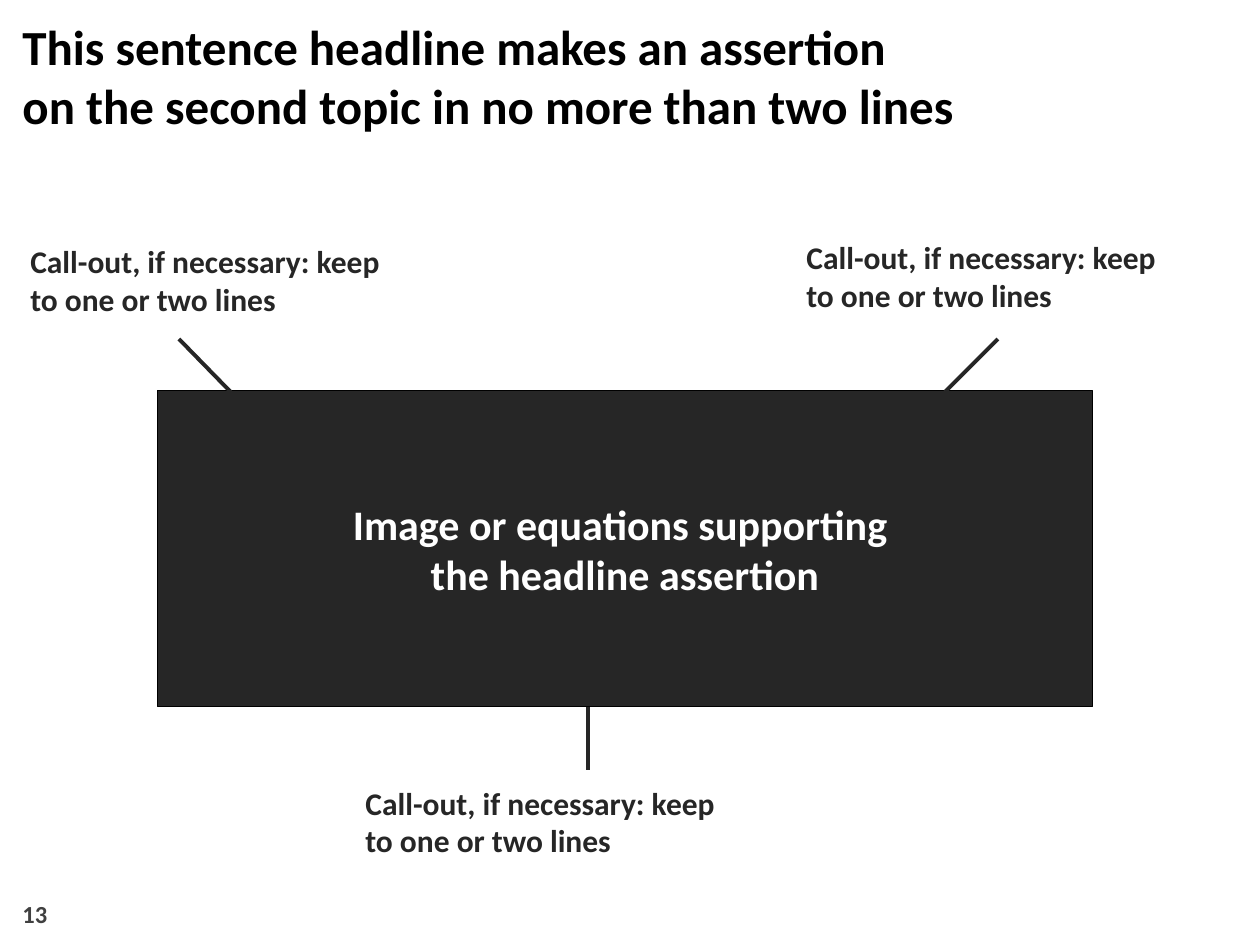
from lxml.etree import SubElement
from pptx import Presentation
from pptx.dml.color import RGBColor
from pptx.enum.shapes import MSO_CONNECTOR, MSO_SHAPE
from pptx.enum.text import MSO_ANCHOR, PP_ALIGN
from pptx.oxml.ns import qn
from pptx.util import Inches, Pt

DARK = "262626"
CALLOUT = "Call-out, if necessary: keep \vto one or two lines"


def color(value):
    return RGBColor.from_string(value)


def write(shape, text, size, shade, align=PP_ALIGN.LEFT, anchor=MSO_ANCHOR.TOP):
    frame = shape.text_frame
    frame.word_wrap = True
    frame.vertical_anchor = anchor
    frame.text = text
    para = frame.paragraphs[0]
    para.alignment = align
    for span in para.runs:
        span.font.name = "Calibri"
        span.font.size = Pt(size)
        span.font.bold = True
        span.font.color.rgb = color(shade)
    return frame


def add_text(page, box, text, size, shade, anchor=MSO_ANCHOR.TOP):
    shape = page.shapes.add_textbox(*map(Inches, box))
    return write(shape, text, size, shade, anchor=anchor)


def add_callout(page, left, top):
    frame = add_text(page, (left, top, 3.58, 0.66), CALLOUT, 18, DARK)
    frame.margin_left = frame.margin_right = Inches(0.07)
    frame.margin_top = frame.margin_bottom = Inches(0.03)


def add_leader(page, start, end):
    line = page.shapes.add_connector(
        MSO_CONNECTOR.STRAIGHT, *map(Inches, start + end))
    line.line.color.rgb = color(DARK)
    line.line.width = Pt(2.25)
    SubElement(line._element.spPr, qn("a:effectLst"))


def add_panel(page, box):
    panel = page.shapes.add_shape(MSO_SHAPE.RECTANGLE, *map(Inches, box))
    panel.shadow.inherit = False
    panel.fill.solid()
    panel.fill.fore_color.rgb = color(DARK)
    panel.line.color.rgb = color("000000")
    panel.line.width = Pt(0.75)
    write(panel, "Image or equations supporting \vthe headline assertion",
          24, "FFFFFF", PP_ALIGN.CENTER, MSO_ANCHOR.MIDDLE)


def add_figure(page, box):
    left, top, width, height = box
    bottom = top + height
    add_leader(page, (left + 3.42, bottom - 0.17), (left + 3.42, bottom + 0.5))
    add_panel(page, box)
    add_leader(page, (left + 0.17, top - 0.41), (left + 0.58, top + 0.01))
    add_leader(page, (left + 6.67, top - 0.41), (left + 6.25, top + 0.01))
    add_callout(page, left - 1.08, top - 1.21)
    add_callout(page, left + 5.08, top - 1.24)
    add_callout(page, left + 1.58, bottom + 0.58)


def main():
    deck = Presentation()
    deck.slide_width = Inches(10)
    deck.slide_height = Inches(7.5)
    page = deck.slides.add_slide(deck.slide_layouts[6])
    add_text(page, (0.08, 7.02, 2.33, 0.4), "13", 14, "404040", MSO_ANCHOR.BOTTOM)
    add_figure(page, (1.25, 3.1, 7.42, 2.51))
    add_text(page, (0.08, 0.08, 9.75, 1.03),
             "This sentence headline makes an assertion \v"
             "on the second topic in no more than two lines", 28, "000000")
    deck.save("out.pptx")


if __name__ == "__main__":
    main()
